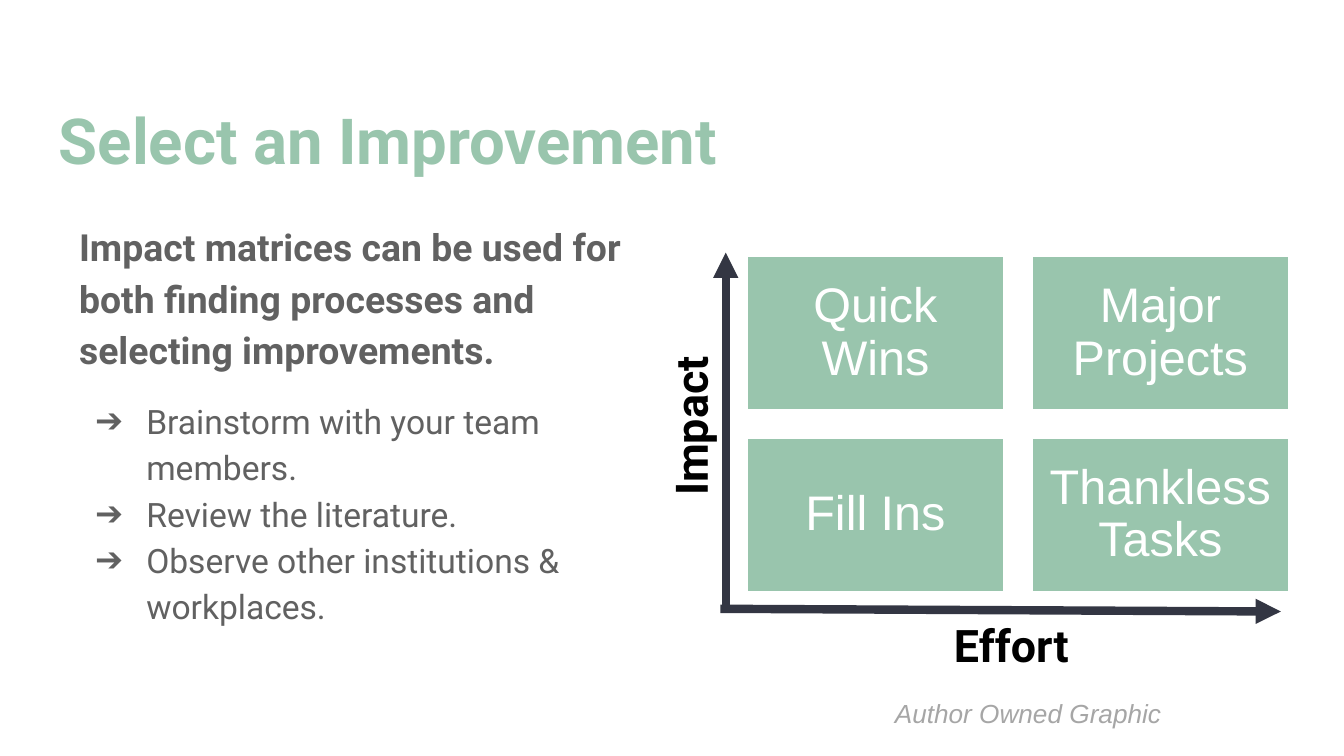
from dataclasses import dataclass

from lxml import etree
from pptx import Presentation
from pptx.dml.color import RGBColor
from pptx.enum.shapes import MSO_CONNECTOR, MSO_SHAPE
from pptx.enum.text import MSO_ANCHOR, PP_ALIGN
from pptx.oxml.ns import qn
from pptx.util import Inches, Pt

RECT = MSO_SHAPE.RECTANGLE
LINE = MSO_CONNECTOR.STRAIGHT
MIDDLE = MSO_ANCHOR.MIDDLE
LEFT, CENTER = PP_ALIGN.LEFT, PP_ALIGN.CENTER


@dataclass(frozen=True)
class Theme:
    green: str = "99C5AD"
    gray: str = "616161"
    navy: str = "333643"
    pale: str = "A6A6A6"
    black: str = "000000"
    white: str = "FFFFFF"
    head: str = "Roboto"
    plain: str = "Arial"
    title: int = 34
    cell: int = 26
    axis: int = 24
    lead: int = 20
    item: int = 18
    note: int = 14


theme = Theme()


def add_run(para, text, size, color, face=theme.head, bold=False, italic=False):
    run = para.add_run()
    run.text = text
    font = run.font
    font.name, font.size = face, Pt(size)
    font.bold, font.italic = bold, italic
    font.color.rgb = RGBColor.from_string(color)


def add_box(left, top, width, height, pad=0.05):
    """Add a wrapping text box; pad is its top and bottom inset in inches."""
    box = slide.shapes.add_textbox(
        Inches(left), Inches(top), Inches(width), Inches(height))
    frame = box.text_frame
    frame.word_wrap = True
    frame.margin_left = frame.margin_right = Inches(0.1)
    frame.margin_top = frame.margin_bottom = Inches(pad)
    return box


deck = Presentation()
deck.slide_width = Inches(10)
deck.slide_height = Inches(10 * 9 / 16)
slide = deck.slides.add_slide(deck.slide_layouts[6])

# Lead and list
body = add_box(0.49, 1.52, 4.35, 3.45, pad=0.1).text_frame
lead = body.paragraphs[0]
lead.line_spacing = 1.15
add_run(lead, "Impact matrices can be used for both finding processes "
        "and selecting improvements.", theme.lead, theme.gray, bold=True)

items = ["Brainstorm with your team members.", "Review the literature.",
         "Observe other institutions & workplaces."]
for i, text in enumerate(items):
    para = body.add_paragraph()
    props = para._p.get_or_add_pPr()
    props.set("marL", str(Inches(0.5)))
    props.set("indent", str(Inches(-0.38)))
    tint = etree.SubElement(props, qn("a:buClr"))
    etree.SubElement(tint, qn("a:srgbClr"), val=theme.gray)
    etree.SubElement(props, qn("a:buFont"), typeface=theme.head)
    etree.SubElement(props, qn("a:buChar"), char="➔")
    para.line_spacing = 1.15
    para.space_before = Pt(0 if i else 12)
    add_run(para, text, theme.item, theme.gray)

# Title
title = add_box(0.34, 0.65, 9.32, 0.63, pad=0.1)
add_run(title.text_frame.paragraphs[0], "Select an Improvement",
        theme.title, theme.green, bold=True)

# Matrix
grid = [["Quick Wins", "Major Projects"], ["Fill Ins", "Thankless Tasks"]]
for row, names in enumerate(grid):
    for col, name in enumerate(names):
        cell = slide.shapes.add_shape(
            RECT, Inches(5.55 + col * 2.12), Inches(1.9 + row * 1.35),
            Inches(1.93), Inches(1.16))
        cell.shadow.inherit = False
        cell.fill.solid()
        cell.fill.fore_color.rgb = RGBColor.from_string(theme.green)
        cell.line.color.rgb = RGBColor.from_string(theme.white)
        cell.line.width = Pt(2)
        frame = cell.text_frame
        frame.word_wrap = True
        frame.vertical_anchor = MIDDLE
        frame.margin_left = frame.margin_right = Inches(0.11)
        frame.margin_top = frame.margin_bottom = Inches(0.11)
        para = frame.paragraphs[0]
        para.alignment = CENTER
        para.line_spacing = 0.9
        add_run(para, name, theme.cell, theme.white, theme.plain)

# Axes
for ends in [(5.4, 4.52, 5.4, 1.88), (5.36, 4.53, 9.53, 4.55)]:
    axis = slide.shapes.add_connector(LINE, *[Inches(n) for n in ends])
    axis.line.color.rgb = RGBColor.from_string(theme.navy)
    axis.line.width = Pt(4.5)
    etree.SubElement(axis.line._get_or_add_ln(), qn("a:tailEnd"),
                     type="triangle")
    etree.SubElement(axis._element.spPr, qn("a:effectLst"))

for name, left, top, turn in [("Impact", 3.74, 2.92, 270),
                              ("Effort", 6.13, 4.55, 0)]:
    label = add_box(left, top, 2.79, 0.5)
    label.rotation = turn
    para = label.text_frame.paragraphs[0]
    para.alignment = CENTER
    add_run(para, name, theme.axis, theme.black, bold=True)

# Credit
note = add_box(6.56, 5.14, 2.37, 0.34).text_frame.paragraphs[0]
note.alignment = LEFT
add_run(note, "Author Owned Graphic", theme.note, theme.pale, theme.plain,
        italic=True)

deck.save("out.pptx")
